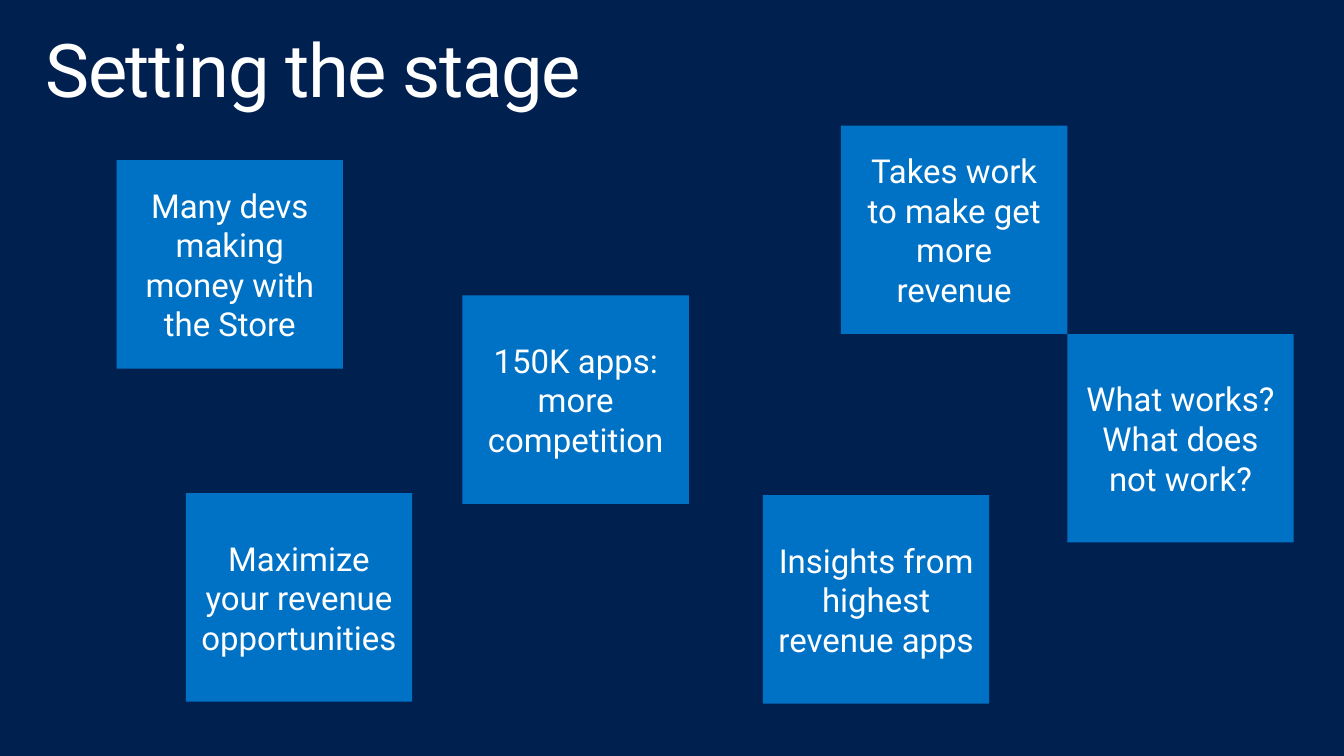
from pptx import Presentation
from pptx.dml.color import RGBColor
from pptx.enum.shapes import MSO_SHAPE as Shape
from pptx.enum.text import MSO_ANCHOR as Anchor, PP_ALIGN as Align
from pptx.util import Inches, Pt

COLORS = {"background": "002050", "tile": "0072C6", "text": "FFFFFF"}
FONT = "Roboto"
CELL = Inches(0.1)  # the slide is a grid of 136 columns by 76.5 rows
SLIDE_COLUMNS, SLIDE_ROWS = 136, 76.5
TILE_COLUMNS, TILE_ROWS = 22.9, 21.1

# column, row, text
TILES = [
    (46.8, 29.9, "150K apps: more competition"),
    (11.8, 16.2, "Many devs making money with the Store"),
    (85.1, 12.7, "Takes work to make get more revenue"),
    (77.2, 50.1, "Insights from highest revenue apps"),
    (18.8, 49.9, "Maximize your revenue opportunities"),
    (108, 33.8, "What works?\nWhat does not work?"),
]


def cells(*counts):
    return [round(count * CELL) for count in counts]


def color(name):
    return RGBColor.from_string(COLORS[name])


def write(shape, text, size, align, anchor, side_inset):
    frame = shape.text_frame
    frame.word_wrap = True
    frame.vertical_anchor = anchor
    frame.margin_left = frame.margin_right = Inches(side_inset)
    frame.margin_top = frame.margin_bottom = Inches(0.1)
    frame.text = text
    for para in frame.paragraphs:
        para.alignment = align
        for span in para.runs:
            span.font.name = FONT
            span.font.size = Pt(size)
            span.font.color.rgb = color("text")
    return frame


def add_title(page, box, text):
    title = page.shapes.add_textbox(*cells(*box))
    frame = write(title, text, 54, Align.LEFT, Anchor.TOP, 0.16)
    para = frame.paragraphs[0]
    para.line_spacing = 0.9
    # Letter spacing is in hundredths of a point
    para.runs[0].font._element.set("spc", "-100")


def add_tile(page, box, text):
    tile = page.shapes.add_shape(Shape.RECTANGLE, *cells(*box))
    tile.shadow.inherit = False
    tile.fill.solid()
    tile.fill.fore_color.rgb = color("tile")
    tile.line.fill.background()
    write(tile, text, 24, Align.CENTER, Anchor.MIDDLE, 0.15)


def add_stage_slide(deck):
    page = deck.slides.add_slide(deck.slide_layouts[6])
    page.background.fill.solid()
    page.background.fill.fore_color.rgb = color("background")
    add_title(page, (3, 2.4, 130, 10), "Setting the stage")
    for column, row, text in TILES:
        add_tile(page, (column, row, TILE_COLUMNS, TILE_ROWS), text)


def main():
    deck = Presentation()
    deck.slide_width, deck.slide_height = cells(SLIDE_COLUMNS, SLIDE_ROWS)
    add_stage_slide(deck)
    deck.save("out.pptx")


if __name__ == "__main__":
    main()
